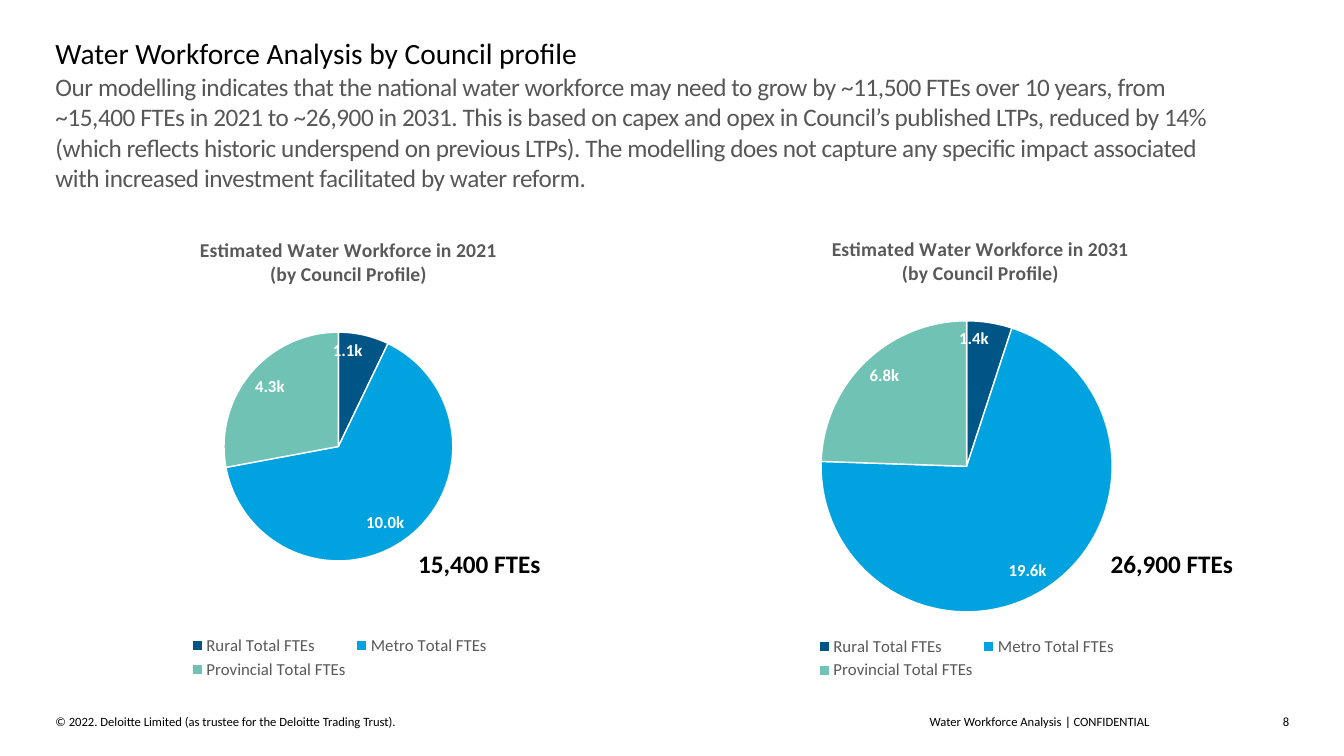
from lxml.etree import SubElement
from pptx import Presentation
from pptx.chart.data import CategoryChartData
from pptx.dml.color import RGBColor
from pptx.enum.chart import XL_CHART_TYPE, XL_LABEL_POSITION, XL_LEGEND_POSITION
from pptx.enum.shapes import MSO_SHAPE
from pptx.enum.text import MSO_ANCHOR, MSO_AUTO_SIZE, PP_ALIGN
from pptx.oxml.ns import qn
from pptx.util import Pt

# Content
TITLE = "Water Workforce Analysis by Council profile"
INTRO = (
    "Our modelling indicates that the national water workforce may need to grow by "
    "~11,500 FTEs over 10 years, from ~15,400 FTEs in 2021 to ~26,900 in 2031. "
    "This is based on capex and opex in Council’s published LTPs, reduced by 14% "
    "(which reflects historic underspend on previous LTPs). The modelling does not "
    "capture any specific impact associated with increased investment facilitated "
    "by water reform."
)
GROUPS = ["Rural Total FTEs", "Metro Total FTEs", "Provincial Total FTEs"]
HUES = ["005587", "00A3E0", "6FC2B4"]
# Pie boxes and titles are placed as fractions of the chart
PIES = [
    dict(year=2021, vals=[1100, 10000, 4300], left=72.7, top=148.3,
         head=(0.2, 0.055), pie=(0.257, 0.262, 0.481, 0.481),
         total="15,400 FTEs", mark=291.6),
    dict(year=2031, vals=[1400, 19600, 6800], left=520.6, top=149,
         head=(0.21, 0.05), pie=(0.194, 0.236, 0.612, 0.612),
         total="26,900 FTEs", mark=786.2),
]
# Footer: text, left, width, alignment
FOOT = [
    ("© 2022. Deloitte Limited (as trustee for the Deloitte Trading Trust).",
     39.6, 422, PP_ALIGN.LEFT),
    ("Water Workforce Analysis", 608.4, 149.8, PP_ALIGN.RIGHT),
    ("CONFIDENTIAL", 766.8, 121.7, PP_ALIGN.LEFT),
    ("8", 896.4, 24.5, PP_ALIGN.RIGHT),
]
FONT, SIDE = "Calibri", 339.8


def color(code):
    return RGBColor.from_string(code)


def style(font, size, code, bold=False):
    font.name, font.size, font.bold = FONT, Pt(size), bold
    font.color.rgb = color(code)


def write(shape, text, size, code="000000", bold=False, align=PP_ALIGN.LEFT, inset=0):
    frame = shape.text_frame
    frame.text = text
    frame.word_wrap = True
    frame.auto_size = MSO_AUTO_SIZE.NONE
    frame.vertical_anchor = MSO_ANCHOR.TOP
    frame.margin_left = frame.margin_right = Pt(inset)
    frame.margin_top = frame.margin_bottom = Pt(inset / 2)
    para = frame.paragraphs[0]
    para.alignment = align
    run = para.runs[0]
    style(run.font, size, code, bold)
    return run


def place(shape, *box):
    shape.left, shape.top, shape.width, shape.height = map(Pt, box)


def add_text(box, *args, **kw):
    return write(slide.shapes.add_textbox(*map(Pt, box)), *args, **kw)


def lay_out(node, index, spots, inner=False):
    for old in node.findall(qn("c:layout")):
        node.remove(old)
    layout = SubElement(node, qn("c:layout"))
    node.insert(index, layout)
    manual = SubElement(layout, qn("c:manualLayout"))
    pairs = [("layoutTarget", "inner")] if inner else []
    pairs += [("xMode", "edge"), ("yMode", "edge")]
    pairs += zip("xywh", map(str, spots))
    for tag, val in pairs:
        SubElement(manual, qn("c:" + tag)).set("val", val)


def add_pie(item):
    data = CategoryChartData()
    data.categories = GROUPS
    data.add_series("Series 1", item["vals"])
    chart = slide.shapes.add_chart(
        XL_CHART_TYPE.PIE, Pt(item["left"]), Pt(item["top"]), Pt(SIDE), Pt(SIDE), data
    ).chart
    style(chart.font, 10, "000000")

    # Chart title
    chart.has_title = True
    head = chart.chart_title
    head.include_in_layout = False
    head.text_frame.text = (
        f"Estimated Water Workforce in {item['year']}\n(by Council Profile)"
    )
    for para in head.text_frame.paragraphs:
        style(para.font, 14, "595959", True)
        style(para.runs[0].font, 14, "595959", True)
    lay_out(head._element, 1, item["head"])

    # Legend
    chart.has_legend = True
    chart.legend.position = XL_LEGEND_POSITION.BOTTOM
    chart.legend.include_in_layout = False
    style(chart.legend.font, 12, "595959")

    # Slices and labels
    plot = chart.plots[0]
    plot.vary_by_categories = True
    for i, hue in enumerate(HUES):
        look = plot.series[0].points[i].format
        look.fill.solid()
        look.fill.fore_color.rgb = color(hue)
        look.line.color.rgb = color("FFFFFF")
        look.line.width = Pt(1)
    plot.has_data_labels = True
    labels = plot.data_labels
    labels.show_value = True
    labels.show_percentage = False
    labels.number_format = '0.0,"k"'
    labels.number_format_is_linked = False
    labels.position = XL_LABEL_POSITION.INSIDE_END
    style(labels.font, 12, "FFFFFF", True)
    lay_out(chart._chartSpace.find(".//" + qn("c:plotArea")), 0, item["pie"], True)


deck = Presentation()
deck.slide_width, deck.slide_height = Pt(960), Pt(540)
slide = deck.slides.add_slide(deck.slide_layouts[5])

# Title and introduction
title = slide.shapes.title
place(title, 39.6, 25.2, 880.6, 54.7)
write(title, TITLE, 21)
intro = add_text((39.6, 51.1, 838, 59.8), INTRO, 18, "575757")
intro.font._element.set("spc", "-30")

# Pies, then their totals
for item in PIES:
    add_pie(item)
for item in PIES:
    add_text((item["mark"], 388, 121, 28.8), item["total"], 18, bold=True, inset=7.2)

# Footer with its divider
for text, left, width, align in FOOT:
    add_text((left, 509.8, width, 11.5), text, 9, align=align)
bar = slide.shapes.add_shape(MSO_SHAPE.RECTANGLE, Pt(762.5), Pt(511.9), Pt(0.75), Pt(8))
bar.shadow.inherit = False
bar.fill.solid()
bar.fill.fore_color.rgb = color("000000")
bar.line.fill.background()

deck.save("out.pptx")
